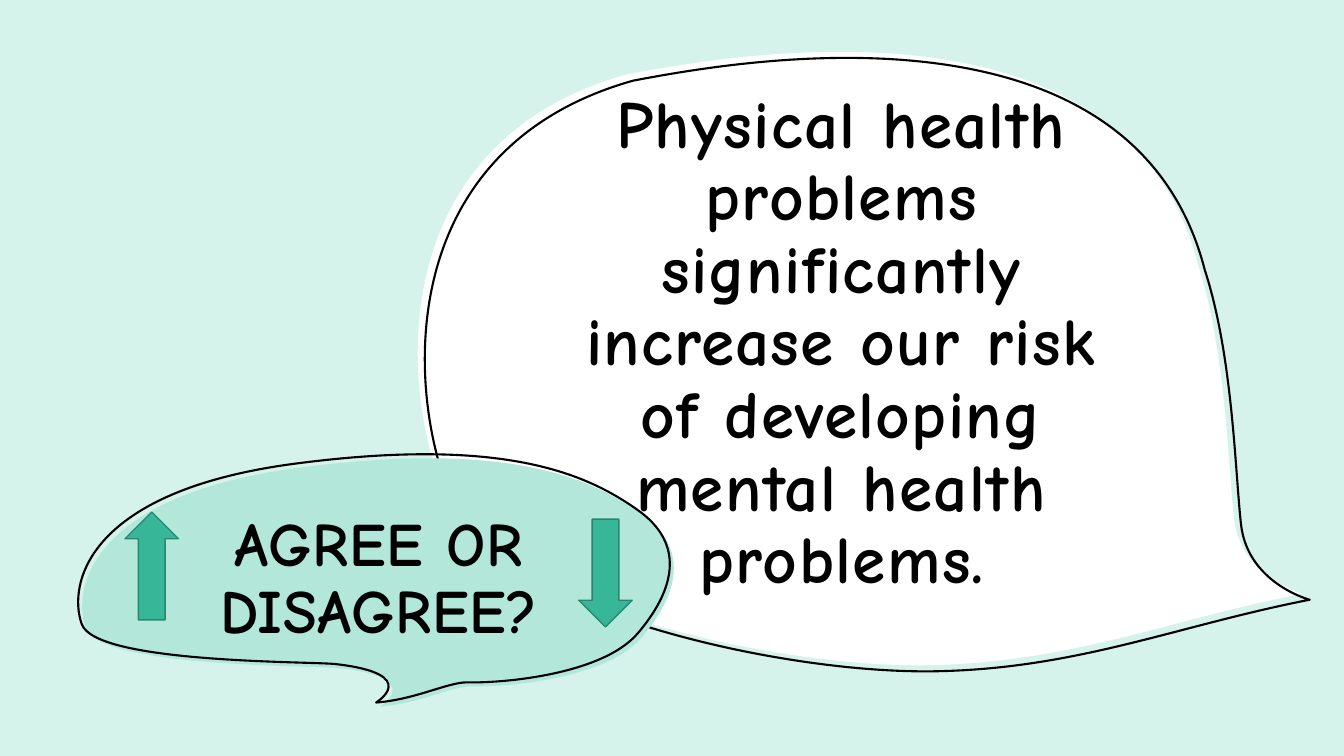
from dataclasses import dataclass

from lxml import etree
from pptx import Presentation
from pptx import util as u
from pptx.dml.color import RGBColor
from pptx.enum import shapes, text
from pptx.oxml.ns import qn


@dataclass(frozen=True)
class Theme:
    font: str = "Comic Neue"
    ink: str = "000000"
    background: str = "D5F2EB"
    white: str = "FFFFFF"
    mint: str = "B2E7DA"
    arrow: str = "38B698"
    arrow_edge: str = "298770"
    statement_size: int = 48
    prompt_size: int = 44
    outline_width: float = 1.5
    arrow_line_width: float = 1


THEME = Theme()

# Each outline is a start point followed by Bezier triples (two controls, one end).
STATEMENT_BUBBLE = [
    (12.99, 5.95),
    (11.66, 6.21), (10.68, 6.64), (9.25, 6.66),
    (7.7, 6.68), (5.03, 6.05), (4.54, 5.08),
    (4.04, 4.1), (3.79, 1.5), (6.28, 0.8),
    (7.24, 0.62), (11.23, -0.13), (11.95, 2.68),
    (12.23, 3.54), (12.25, 4.69), (12.31, 5.21),
    (12.38, 5.79), (12.99, 5.95), (12.99, 5.95),
]
PROMPT_BUBBLE = [
    (3.73, 6.97),
    (4.12, 6.94), (4.44, 6.77), (4.63, 6.77),
    (4.96, 6.78), (5.96, 6.7), (6.32, 6.29),
    (6.68, 5.87), (6.82, 5.4), (6.31, 5.05),
    (5.81, 4.7), (4.99, 4.33), (2.93, 4.6),
    (0.87, 4.87), (0.67, 5.79), (0.81, 6.19),
    (0.94, 6.59), (3.14, 6.56), (3.34, 6.59),
    (4.19, 6.69), (3.73, 6.97), (3.73, 6.97),
]


def paint(shape, fill=None, line=None, width=1):
    shape.shadow.inherit = False
    if fill:
        shape.fill.solid()
        shape.fill.fore_color.rgb = RGBColor.from_string(fill)
    else:
        shape.fill.background()
    if line:
        shape.line.color.rgb = RGBColor.from_string(line)
        shape.line.width = u.Pt(width)
    else:
        shape.line.fill.background()


def add_curve(page, points, shift=(0, 0)):
    """Draw a closed outline whose points after the first are Bezier triples."""
    start, *rest = [(u.Inches(x + shift[0]), u.Inches(y + shift[1])) for x, y in points]
    builder = page.shapes.build_freeform(*start)
    builder.add_line_segments(rest, close=True)
    shape = builder.convert_to_shape()
    segments = list(shape._element.iter(qn("a:lnTo")))
    for first in range(0, len(segments), 3):
        curve = etree.Element(qn("a:cubicBezTo"))
        segments[first].addprevious(curve)
        for segment in segments[first:first + 3]:
            curve.append(segment[0])
            segment.getparent().remove(segment)
    return shape


def add_bubble(page, points, fill, fill_shift):
    """Add a coloured bubble with its outline slightly out of register."""
    paint(add_curve(page, points, fill_shift), fill=fill)
    paint(add_curve(page, points), line=THEME.ink, width=THEME.outline_width)


def place(shape, left, top, width, height):
    shape.left, shape.top = u.Inches(left), u.Inches(top)
    shape.width, shape.height = u.Inches(width), u.Inches(height)


def write(box, wording, *, size, tracking, before=0):
    """Fill a placeholder with one centred, unbulleted paragraph."""
    frame = box.text_frame
    frame.word_wrap = True
    frame.auto_size = text.MSO_AUTO_SIZE.NONE
    frame.vertical_anchor = text.MSO_ANCHOR.MIDDLE
    para = frame.paragraphs[0]
    para.alignment = text.PP_ALIGN.CENTER
    para.line_spacing = 0.9
    para.space_before = u.Pt(before)
    properties = para._p.get_or_add_pPr()
    properties.set("marL", "0")
    properties.set("indent", "0")
    etree.SubElement(properties, qn("a:buNone"))
    span = para.add_run()
    span.text = wording
    span.font.name = THEME.font
    span.font.size = u.Pt(size)
    span.font.bold = True
    span.font.color.rgb = RGBColor.from_string(THEME.ink)
    span._r.get_or_add_rPr().set("spc", str(int(tracking * 100)))


def bring_to_front(page, shape):
    page.shapes._spTree.append(shape._element)


def add_arrow(page, kind, left, top):
    arrow = page.shapes.add_shape(
        kind, u.Inches(left), u.Inches(top), u.Inches(1.07), u.Inches(0.53))
    arrow.rotation = 90
    paint(arrow, THEME.arrow, THEME.arrow_edge, THEME.arrow_line_width)


def main():
    deck = Presentation()
    deck.slide_width, deck.slide_height = u.Inches(13.33), u.Inches(7.5)
    page = deck.slides.add_slide(deck.slide_layouts[1])
    page.background.fill.solid()
    page.background.fill.fore_color.rgb = RGBColor.from_string(THEME.background)

    add_bubble(page, STATEMENT_BUBBLE, THEME.white, (-0.07, -0.06))
    add_bubble(page, PROMPT_BUBBLE, THEME.mint, (0.04, 0.04))

    statement, prompt = page.shapes.title, page.placeholders[1]
    place(statement, 5.49, 1.66, 5.72, 3.51)
    write(statement,
          "Physical health problems significantly increase our risk "
          "of developing mental health problems.",
          size=THEME.statement_size, tracking=1)
    place(prompt, 1.31, 5.17, 4.9, 1.17)
    write(prompt, "AGREE OR DISAGREE?",
          size=THEME.prompt_size, tracking=0.5, before=10)
    for box in (statement, prompt):
        bring_to_front(page, box)

    add_arrow(page, shapes.MSO_SHAPE.LEFT_ARROW, 0.97, 5.35)
    add_arrow(page, shapes.MSO_SHAPE.RIGHT_ARROW, 5.47, 5.42)
    deck.save("out.pptx")


if __name__ == "__main__":
    main()
